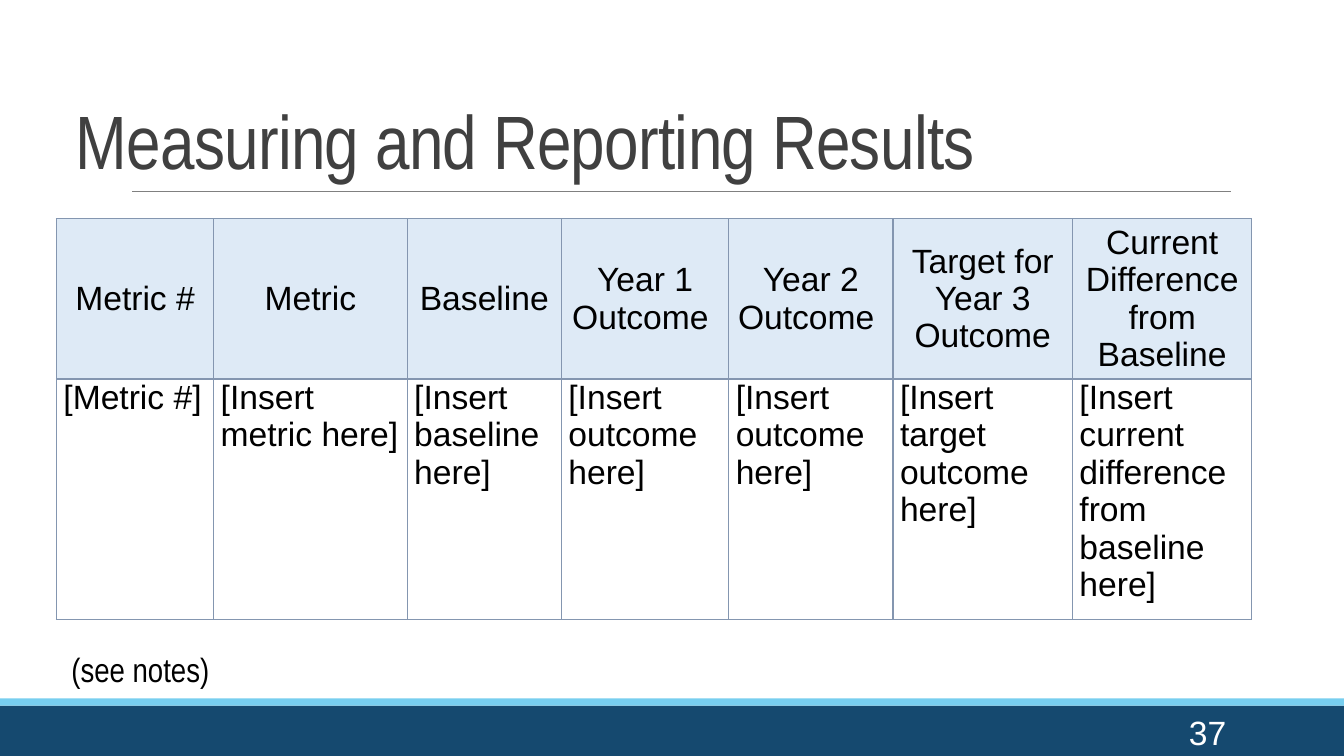
import pptx
import pptx.dml.color
import pptx.enum.shapes
import pptx.enum.text
import pptx.oxml.ns
import pptx.util
from lxml import etree

ALIGN = pptx.enum.text.PP_ALIGN
ANCHOR = pptx.enum.text.MSO_ANCHOR
COLUMNS, ROWS = 160, 90
BODY_FONT, DISPLAY_FONT = "Arial", "Arial Narrow"
NAVY, SKY, GRAY, SLATE = "15496F", "77CEEF", "808080", "8496B0"
HEADER_FILL, TITLE_INK, BLACK, WHITE = "DEEAF6", "404040", "000000", "FFFFFF"

METRICS = [
    (18.72, "Metric #", "[Metric #]"),
    (23.04, "Metric", "[Insert metric here]"),
    (18.36, "Baseline", "[Insert baseline here]"),
    (19.92, "Year 1 Outcome ", "[Insert outcome here]"),
    (19.56, "Year 2 Outcome ", "[Insert outcome here]"),
    (21.36, "Target for Year 3 Outcome", "[Insert target outcome here]"),
    (21.36, "Current Difference from Baseline",
     "[Insert current difference from baseline here]"),
]


def color(hex_code):
    """Turn a hex string into a colour."""
    return pptx.dml.color.RGBColor.from_string(hex_code)


def add_child(parent, tag, **attributes):
    """Append a DrawingML element."""
    return etree.SubElement(parent, pptx.oxml.ns.qn(tag), attributes)


class SlideBuilder:
    """Place styled elements on one slide by grid columns and rows."""

    def __init__(self, deck):
        """Add a title-only slide to the deck."""
        self.column = deck.slide_width / COLUMNS
        self.row = deck.slide_height / ROWS
        self.slide = deck.slides.add_slide(deck.slide_layouts[5])
        self.shapes = self.slide.shapes

    def box(self, left, top, width, height):
        """Convert grid units to lengths."""
        return (round(left * self.column), round(top * self.row),
                round(width * self.column), round(height * self.row))

    def add_words(self, frame, words, size=24, font=BODY_FONT, ink=BLACK,
                  align=ALIGN.LEFT, leading=None, before=0, after=0):
        """Put one formatted run into a text frame."""
        frame.word_wrap = True
        paragraph = frame.paragraphs[0]
        paragraph.alignment = align
        paragraph.line_spacing = leading
        paragraph.space_before = pptx.util.Pt(before)
        paragraph.space_after = pptx.util.Pt(after)
        run = paragraph.add_run()
        run.text = words
        run.font.size = pptx.util.Pt(size)
        run.font.name = font
        run.font.bold = False
        run.font.color.rgb = color(ink)
        return run

    def title(self, words, *place):
        """Move and fill the title placeholder."""
        heading = self.shapes.title
        heading.left, heading.top, heading.width, heading.height = self.box(*place)
        frame = heading.text_frame
        frame.auto_size = pptx.enum.text.MSO_AUTO_SIZE.NONE
        frame.vertical_anchor = ANCHOR.BOTTOM
        run = self.add_words(frame, words, 54, DISPLAY_FONT, TITLE_INK,
                             leading=0.85)
        run._r.get_or_add_rPr().set("spc", "-50")

    def band(self, fill, *place):
        """Add a plain filled rectangle."""
        band = self.shapes.add_shape(
            pptx.enum.shapes.MSO_SHAPE.RECTANGLE, *self.box(*place))
        band.shadow.inherit = False
        band.fill.solid()
        band.fill.fore_color.rgb = color(fill)
        band.line.fill.background()

    def rule(self, start, end, row):
        """Add a thin horizontal line."""
        rule = self.shapes.add_connector(
            pptx.enum.shapes.MSO_CONNECTOR.STRAIGHT,
            *self.box(start, row, end, row))
        rule.line.color.rgb = color(GRAY)
        rule.line.width = pptx.util.Pt(0.5)
        add_child(rule._element.spPr, "a:effectLst")

    def text(self, words, *place, **style):
        """Add a vertically centred text box."""
        frame = self.shapes.add_textbox(*self.box(*place)).text_frame
        frame.vertical_anchor = ANCHOR.MIDDLE
        self.add_words(frame, words, **style)

    def border(self, cell):
        """Outline all four sides of a cell."""
        properties = cell._tc.get_or_add_tcPr()
        for side in ("a:lnL", "a:lnR", "a:lnT", "a:lnB"):
            line = add_child(properties, side, w=str(pptx.util.Pt(1)))
            add_child(add_child(line, "a:solidFill"), "a:srgbClr", val=SLATE)

    def table(self, metrics, left, top, heights):
        """Add a table with a shaded header row."""
        widths, headers, entries = zip(*metrics)
        grid = self.shapes.add_table(
            len(heights), len(widths),
            *self.box(left, top, sum(widths), sum(heights))).table
        grid.first_row = grid.horz_banding = False
        for column, width in zip(grid.columns, widths):
            column.width = round(width * self.column)
        for row, height in zip(grid.rows, heights):
            row.height = round(height * self.row)
        for r, labels in enumerate((headers, entries)):
            for c, label in enumerate(labels):
                self.cell(grid.cell(r, c), label, header=r == 0)

    def cell(self, cell, label, header):
        """Style and fill one table cell."""
        cell.margin_left = cell.margin_right = pptx.util.Inches(0.07)
        cell.margin_top = cell.margin_bottom = 0
        cell.vertical_anchor = ANCHOR.MIDDLE if header else ANCHOR.TOP
        self.border(cell)
        if header:
            cell.fill.solid()
            cell.fill.fore_color.rgb = color(HEADER_FILL)
        else:
            cell.fill.background()
        self.add_words(cell.text_frame, label, after=6,
                       align=ALIGN.CENTER if header else ALIGN.LEFT)


def main():
    """Build and save the results slide."""
    deck = pptx.Presentation()
    deck.slide_width = pptx.util.Inches(13.33)
    deck.slide_height = pptx.util.Inches(7.5)
    results = SlideBuilder(deck)
    results.band(NAVY, 0, 84, COLUMNS, 6)
    results.band(SKY, 0, 83.16, COLUMNS, 0.84)
    results.rule(15.72, 146.52, 22.8)
    results.title("Measuring and Reporting Results", 7.8, 3.48, 144.6, 19.08)
    results.table(METRICS, 6.72, 26.04, (19.08, 28.68))
    results.text("(see notes)", 7.32, 75.12, 142.08, 9.72, font=DISPLAY_FONT,
                 leading=0.9, before=12, after=2)
    results.text("37", 130, 84.72, 17.16, 4.8, ink=WHITE, align=ALIGN.RIGHT)
    deck.save("out.pptx")


if __name__ == "__main__":
    main()
